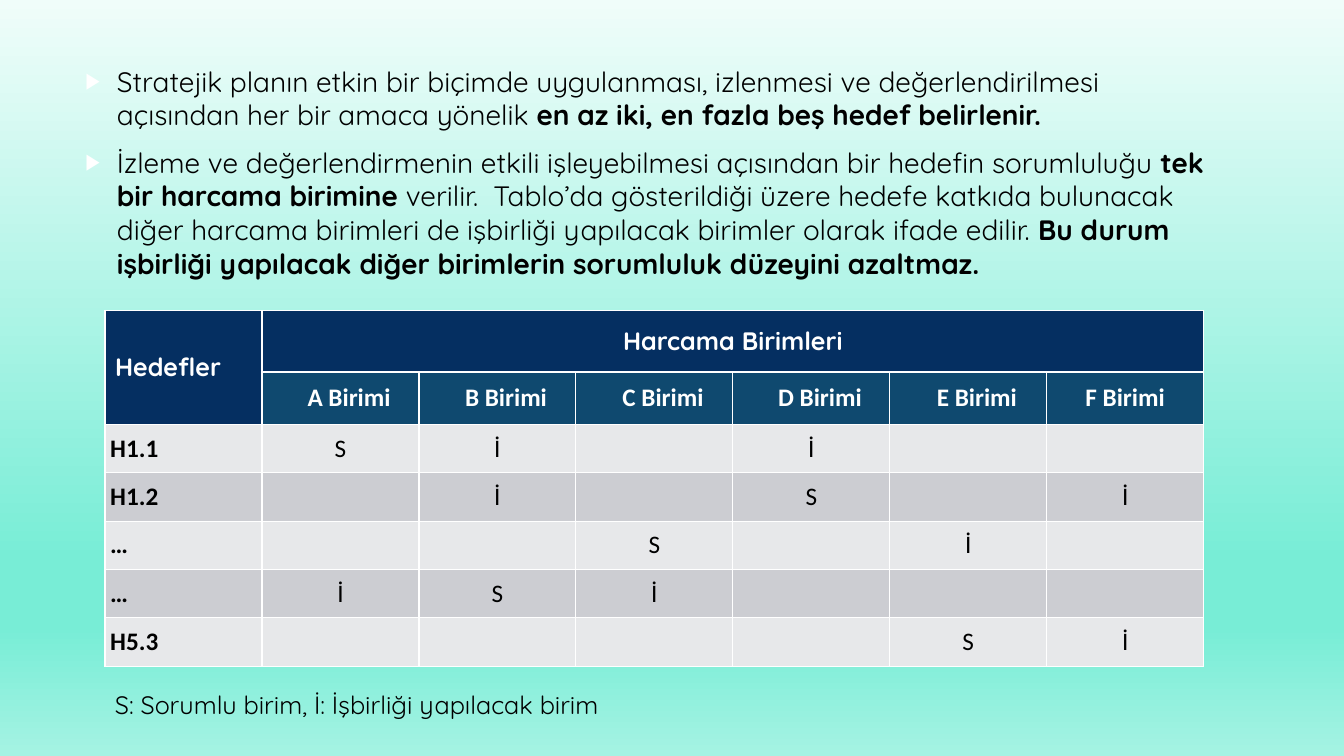
from dataclasses import dataclass
from typing import Any, NamedTuple

from lxml.etree import SubElement
from pptx import Presentation
from pptx.dml.color import RGBColor
from pptx.enum.text import MSO_ANCHOR, MSO_AUTO_SIZE, PP_ALIGN
from pptx.oxml.ns import qn
from pptx.util import Emu, Length, Pt

# Slide grid: 128 columns by 72 rows of square units
WIDE, HIGH = 12192000, 6858000
COLS, ROWS = 128, 72

HUES = {
    "navy": "052F61", "blue": "0F496F", "pale": "E7E8EA", "grey": "CCCDD2",
    "white": "FFFFFF", "black": "000000",
    "mist": "F0FDFA", "mint": "78EDD6", "aqua": "A5F3E3",
}
STOPS = [(0, "mist"), (74, "mint"), (83, "mint"), (100, "aqua")]


class Run(NamedTuple):
    text: str
    bold: bool = False


class Box(NamedTuple):
    left: float
    top: float
    width: float
    height: float


@dataclass
class Style:
    face: str = "Quicksand"
    size: float = 18
    hue: str = "black"
    align: Any = PP_ALIGN.LEFT
    before: float = 0
    after: float = 0
    indent: float = 0
    hang: float = 0


@dataclass
class Cell:
    runs: list[Run]
    fill: str
    style: Style
    tight: bool = True


# Content
POINTS = [
    [Run("Stratejik planın etkin bir biçimde uygulanması, izlenmesi ve "
         "değerlendirilmesi açısından her bir amaca yönelik "),
     Run("en az iki, en fazla beş hedef belirlenir.", True)],
    [Run("İzleme ve değerlendirmenin etkili işleyebilmesi açısından bir "
         "hedefin sorumluluğu "),
     Run("tek bir harcama birimine", True),
     Run(" verilir.  Tablo’da gösterildiği üzere hedefe katkıda bulunacak "
         "diğer harcama birimleri de işbirliği yapılacak birimler olarak "
         "ifade edilir. "),
     Run("Bu durum işbirliği yapılacak diğer birimlerin sorumluluk "
         "düzeyini azaltmaz.", True)],
]
UNITS = "ABCDEF"
GOALS = [("H1.1", "Sİ-İ--"), ("H1.2", "-İ-S-İ"), ("…", "--S-İ-"),
         ("…", "İSİ---"), ("H5.3", "----Sİ")]
NOTE = "S: Sorumlu birim, İ: İşbirliği yapılacak birim"

# Places, in grid units
BODY = Box(7.2, 1.73, 108.48, 29.28)
GRID = Box(10, 29.57, 104.65, 33.9)
FOOT = Box(10, 65.18, 53.6, 3.84)
TALL = [5.86, 4.99] + [4.61] * len(GOALS)

# Text styles
POINT = Style(size=20, before=4, after=6, indent=3, hang=3)
HEAD = Style(hue="white")
TITLE = Style(hue="white", align=PP_ALIGN.CENTER)
UNIT = Style("Calibri", hue="white", align=PP_ALIGN.CENTER, before=3, indent=1.65)
LAST = Style("Calibri", hue="white", align=PP_ALIGN.CENTER)
GOAL = Style("Calibri", before=3, indent=0.5)
MARK = Style("Calibri", align=PP_ALIGN.CENTER, before=3)


def across(cols: float) -> Length:
    return Emu(round(WIDE * cols / COLS))


def down(rows: float) -> Length:
    return Emu(round(HIGH * rows / ROWS))


def place(box: Box) -> tuple[Length, ...]:
    return across(box.left), down(box.top), across(box.width), down(box.height)


def apply(thing: Any, **format: Any) -> None:
    for name, value in format.items():
        setattr(thing, name, value)


def write(para: Any, runs: list[Run], style: Style) -> None:
    apply(para, alignment=style.align, space_before=Pt(style.before),
          space_after=Pt(style.after))
    props = para._p.get_or_add_pPr()
    props.set("marL", str(across(style.indent)))
    props.set("indent", str(-across(style.hang)))
    for part in runs:
        run = para.add_run()
        run.text = part.text
        apply(run.font, name=style.face, size=Pt(style.size), bold=part.bold)
        run.font.color.rgb = RGBColor.from_string(HUES[style.hue])


def tint(parent: Any, hue: str) -> None:
    SubElement(parent, qn("a:srgbClr"), val=HUES[hue])


def bullet(para: Any) -> None:
    props = para._p.get_or_add_pPr()
    tint(SubElement(props, qn("a:buClr")), "white")
    SubElement(props, qn("a:buSzPct"), val="80000")
    SubElement(props, qn("a:buFont"), typeface="Arial")
    SubElement(props, qn("a:buChar"), char="▶")


def shade(slide: Any) -> None:
    slide.background.fill.gradient()
    grad = slide.element.find(".//" + qn("a:gradFill"))
    for child in list(grad):
        grad.remove(child)
    stops = SubElement(grad, qn("a:gsLst"))
    for share, hue in STOPS:
        tint(SubElement(stops, qn("a:gs"), pos=str(share * 1000)), hue)
    SubElement(grad, qn("a:lin"), ang="5400000", scaled="0")


def frame(slide: Any, box: Box, texts: list[list[Run]], style: Style,
          dots: bool = False, **format: Any) -> None:
    text = slide.shapes.add_textbox(*place(box)).text_frame
    apply(text, word_wrap=True, **format)
    for index, runs in enumerate(texts):
        para = text.add_paragraph() if index else text.paragraphs[0]
        write(para, runs, style)
        if dots:
            bullet(para)


def paint(spot: Any, cell: Cell) -> None:
    props = spot._tc.get_or_add_tcPr()
    for side in "LRTB":
        line = SubElement(props, qn(f"a:ln{side}"), w=str(Pt(1)))
        tint(SubElement(line, qn("a:solidFill")), "white")
    spot.fill.solid()
    spot.fill.fore_color.rgb = RGBColor.from_string(HUES[cell.fill])
    spot.vertical_anchor = MSO_ANCHOR.MIDDLE
    if cell.tight:
        apply(spot, margin_left=0, margin_right=0, margin_top=0, margin_bottom=0)
    write(spot.text_frame.paragraphs[0], cell.runs, cell.style)


def cells() -> list[list[Cell]]:
    blank = Cell([], "navy", TITLE)
    top = [Cell([Run("Hedefler", True)], "navy", HEAD, False),
           Cell([Run("Harcama Birimleri", True)], "navy", TITLE, False)]
    top += [blank] * (len(UNITS) - 1)
    heads = [Cell([Run(f"{unit} Birimi", True)], "blue",
                  LAST if unit == UNITS[-1] else UNIT) for unit in UNITS]
    lines = [top, [blank] + heads]
    for index, (goal, marks) in enumerate(GOALS):
        fill = ("pale", "grey")[index % 2]
        lines.append([Cell([Run(goal, True)], fill, GOAL)] + [
            Cell([] if mark == "-" else [Run(mark)], fill, MARK) for mark in marks])
    return lines


def chart(slide: Any) -> None:
    lines = cells()
    table = slide.shapes.add_table(len(lines), len(lines[0]), *place(GRID)).table
    apply(table, first_row=False, horz_banding=False)
    for col in table.columns:
        col.width = across(GRID.width / len(lines[0]))
    for row, tall in zip(table.rows, TALL):
        row.height = down(tall)
    for y, line in enumerate(lines):
        for x, cell in enumerate(line):
            paint(table.cell(y, x), cell)
    table.cell(0, 0).merge(table.cell(1, 0))
    table.cell(0, 1).merge(table.cell(0, len(UNITS)))


def main() -> None:
    deck = Presentation()
    apply(deck, slide_width=Emu(WIDE), slide_height=Emu(HIGH))
    slide = deck.slides.add_slide(deck.slide_layouts[6])
    shade(slide)
    frame(slide, BODY, POINTS, POINT, True, vertical_anchor=MSO_ANCHOR.MIDDLE)
    chart(slide)
    frame(slide, FOOT, [[Run(NOTE)]], Style(), auto_size=MSO_AUTO_SIZE.SHAPE_TO_FIT_TEXT)
    deck.save("out.pptx")


if __name__ == "__main__":
    main()
